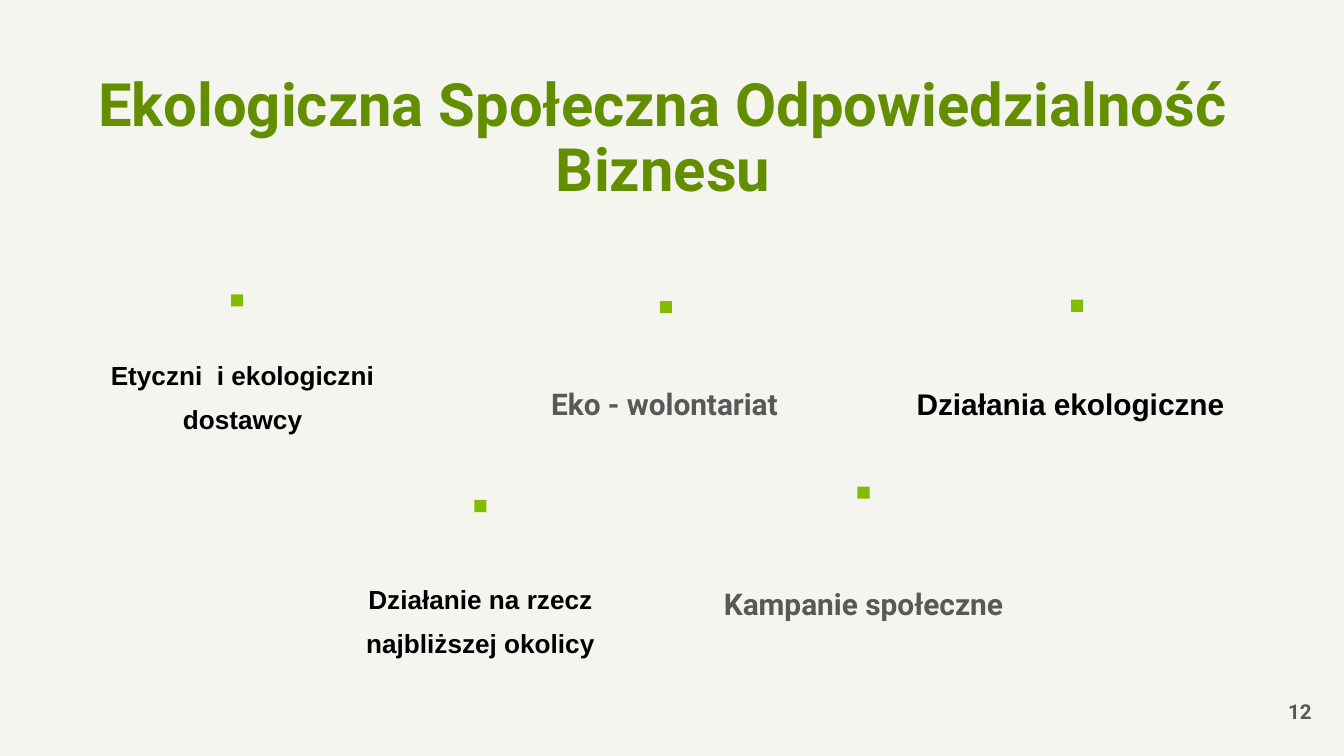
from pptx import Presentation
from pptx.dml.color import RGBColor
from pptx.enum.shapes import MSO_SHAPE
from pptx.enum.text import MSO_ANCHOR as ANCHOR, PP_ALIGN as ALIGN
from pptx.util import Inches, Pt

GREEN, DARK_GREEN, GREY, BLACK = "84BD00", "638E00", "585857", "000000"
BACKGROUND = "F5F5EF"
MARKER_SIZE = 0.09

TITLE = "Ekologiczna Społeczna Odpowiedzialność Biznesu"
PAGE_NUMBER = "12"

ARIAL_SMALL = ("Arial", 14, BLACK)
ARIAL_LARGE = ("Arial", 16, BLACK)
ROBOTO_LARGE = ("Roboto", 16, GREY)

# text, box (left, top, width, height), marker (left, top), style, alignment
TOPICS = [
    ("Etyczni  i ekologiczni dostawcy", (0.74, 2.58, 2.13, 1.05),
     (1.72, 2.19), ARIAL_SMALL, ALIGN.CENTER),
    ("Eko - wolontariat", (3.79, 2.76, 2.31, 0.41),
     (4.91, 2.24), ROBOTO_LARGE, ALIGN.CENTER),
    ("Działania ekologiczne", (6.82, 2.76, 2.31, 1.05),
     (7.97, 2.23), ARIAL_LARGE, ALIGN.LEFT),
    ("Działanie na rzecz najbliższej okolicy", (2.42, 4.25, 2.31, 1.05),
     (3.53, 3.72), ARIAL_SMALL, ALIGN.CENTER),
    ("Kampanie społeczne", (5.27, 4.25, 2.31, 1.05),
     (6.38, 3.62), ROBOTO_LARGE, ALIGN.CENTER),
]


def paint(fill, color):
    fill.solid()
    fill.fore_color.rgb = RGBColor.from_string(color)


def write(shape, text, style, alignment, line_spacing=1.0, anchor=ANCHOR.TOP):
    """Fill a shape with one bold paragraph and no margins."""
    frame = shape.text_frame
    frame.word_wrap = True
    frame.vertical_anchor = anchor
    frame.margin_left = frame.margin_right = 0
    frame.margin_top = frame.margin_bottom = 0
    paragraph = frame.paragraphs[0]
    paragraph.text = text
    paragraph.alignment = alignment
    paragraph.line_spacing = line_spacing
    name, size, color = style
    font = paragraph.font
    font.name, font.size, font.bold = name, Pt(size), True
    font.color.rgb = RGBColor.from_string(color)


def add_text(slide, box, *text_format):
    write(slide.shapes.add_textbox(*map(Inches, box)), *text_format)


def add_marker(slide, left, top):
    marker = slide.shapes.add_shape(
        MSO_SHAPE.RECTANGLE, *map(Inches, (left, top, MARKER_SIZE, MARKER_SIZE)))
    marker.shadow.inherit = False
    paint(marker.fill, GREEN)
    marker.line.fill.background()


presentation = Presentation()
presentation.slide_width = Inches(10)
presentation.slide_height = Inches(10 * 9 / 16)
slide = presentation.slides.add_slide(presentation.slide_layouts[5])
paint(slide.background.fill, BACKGROUND)

title = slide.shapes.title
title.left, title.top, title.width, title.height = map(Inches, (0.56, 0.56, 8.75, 0.79))
write(title, TITLE, ("Roboto", 32, DARK_GREEN), ALIGN.CENTER, 0.9)

for text, box, marker, style, alignment in TOPICS:
    add_marker(slide, *marker)
    add_text(slide, box, text, style, alignment, 1.4)

add_text(slide, (9.16, 5.19, 0.6, 0.2), PAGE_NUMBER, ("Roboto", 11, GREY),
         ALIGN.RIGHT, 1.0, ANCHOR.MIDDLE)

presentation.save("out.pptx")
